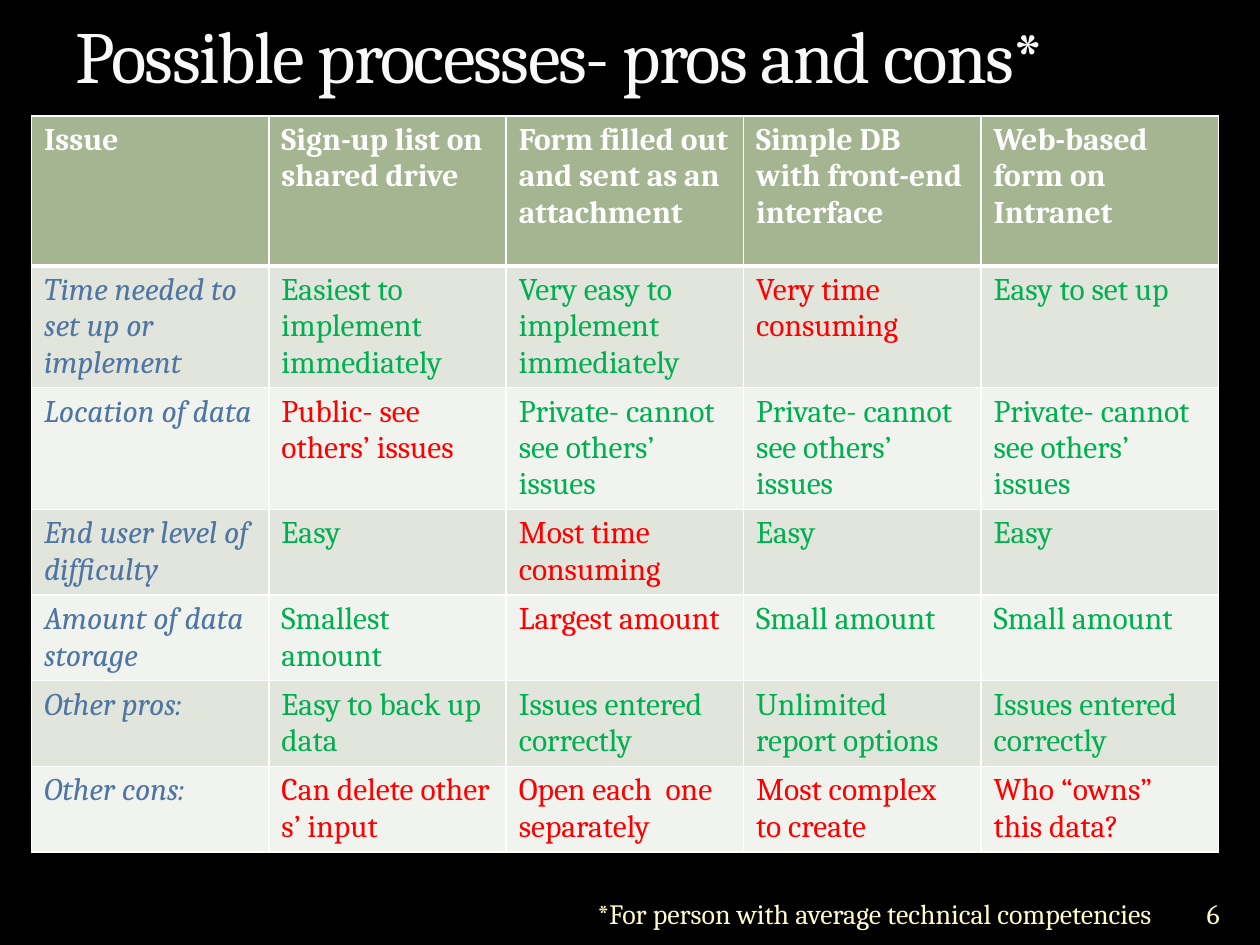
from typing import NamedTuple

from lxml.etree import SubElement
from pptx import Presentation
from pptx.dml.color import RGBColor
from pptx.enum.text import MSO_ANCHOR as Anchor
from pptx.oxml.ns import qn
from pptx.util import Inches, Pt

FONT = "Cambria"
BLACK = RGBColor(0x00, 0x00, 0x00)
WHITE = RGBColor(0xFF, 0xFF, 0xFF)
TITLE_WHITE = RGBColor(0xF9, 0xF9, 0xF9)
CREAM = RGBColor(0xFE, 0xFA, 0xC9)
SAGE = RGBColor(0xA5, 0xB5, 0x92)
BAND_DARK = RGBColor(0xE1, 0xE5, 0xDC)
BAND_LIGHT = RGBColor(0xF0, 0xF3, 0xEE)
ISSUE_BLUE = RGBColor(0x4E, 0x75, 0xA3)
PRO_GREEN = RGBColor(0x00, 0xB0, 0x50)
CON_RED = RGBColor(0xFF, 0x00, 0x00)


class Comparison(NamedTuple):
    issue: str
    verdicts: tuple[str, ...]
    cons: tuple[int, ...]
    height: float


HEADINGS = (
    "Issue",
    "Sign-up list on shared drive",
    "Form filled out and sent as an attachment",
    "Simple DB with front-end interface",
    "Web-based form on Intranet",
)
PRIVATE = "Private- cannot see others’ issues"
COMPARISONS = (
    Comparison("Time needed to set up or implement",
               ("Easiest to implement immediately", "Very easy to implement immediately",
                "Very time consuming", "Easy to set up"), (2,), 0.96),
    Comparison("Location of data",
               ("Public- see others’ issues", PRIVATE, PRIVATE, PRIVATE), (0,), 0.96),
    Comparison("End user level of difficulty",
               ("Easy", "Most time consuming", "Easy", "Easy"), (1,), 0.68),
    Comparison("Amount of data storage",
               ("Smallest amount", "Largest amount", "Small amount", "Small amount"), (1,), 0.68),
    Comparison("Other pros:",
               ("Easy to back up data", "Issues entered correctly",
                "Unlimited report options", "Issues entered correctly"), (), 0.68),
    Comparison("Other cons:",
               ("Can delete other s’ input", "Open each  one separately",
                "Most complex to create", "Who “owns” this data?"), (0, 1, 2, 3), 0.68),
)
HEADER_HEIGHT = 1.19


def style_text(frame, size: float, color: RGBColor, bold=False, italic=False) -> None:
    for run in frame.paragraphs[0].runs:
        run.font.name = FONT
        run.font.size = Pt(size)
        run.font.color.rgb = color
        run.font.bold = bold
        run.font.italic = italic


def add_borders(cell, bottom: float, top: float) -> None:
    properties = cell._tc.get_or_add_tcPr()
    widths = {"a:lnL": 1, "a:lnR": 1, "a:lnT": top, "a:lnB": bottom}
    for position, (side, width) in enumerate(widths.items()):
        line = SubElement(properties, qn(side), w=str(Pt(width)))
        SubElement(SubElement(line, qn("a:solidFill")), qn("a:srgbClr"), val=str(WHITE))
        properties.insert(position, line)


def fill_cell(cell, text: str, fill: RGBColor, color: RGBColor, bold=False,
              italic=False, bottom: float = 1, top: float = 1) -> None:
    cell.text_frame.text = text
    style_text(cell.text_frame, 18, color, bold, italic)
    cell.fill.solid()
    cell.fill.fore_color.rgb = fill
    add_borders(cell, bottom, top)


def add_comparison_table(slide) -> None:
    heights = [HEADER_HEIGHT] + [row.height for row in COMPARISONS]
    table = slide.shapes.add_table(
        len(heights), len(HEADINGS), Inches(0.25), Inches(0.92),
        Inches(9.42), Inches(sum(heights))).table
    for row, height in zip(table.rows, heights):
        row.height = Inches(height)
    for column, heading in enumerate(HEADINGS):
        fill_cell(table.cell(0, column), heading, SAGE, WHITE, bold=True, bottom=3)
    for number, comparison in enumerate(COMPARISONS, start=1):
        band = BAND_DARK if number % 2 else BAND_LIGHT
        top = 3 if number == 1 else 1
        fill_cell(table.cell(number, 0), comparison.issue, band, ISSUE_BLUE,
                  italic=True, top=top)
        for option, verdict in enumerate(comparison.verdicts):
            color = CON_RED if option in comparison.cons else PRO_GREEN
            fill_cell(table.cell(number, option + 1), verdict, band, color, top=top)


def add_text(slide, text: str, left: float, top: float, width: float, height: float,
             size: float, color: RGBColor, anchor: Anchor):
    frame = slide.shapes.add_textbox(
        Inches(left), Inches(top), Inches(width), Inches(height)).text_frame
    frame.word_wrap = True
    frame.vertical_anchor = anchor
    frame.text = text
    style_text(frame, size, color)
    return frame


def add_title(slide) -> None:
    title = add_text(slide, "Possible processes- pros and cons*", 0.5, 0, 9, 0.83,
                     42, TITLE_WHITE, Anchor.BOTTOM)
    title.paragraphs[0].runs[0]._r.get_or_add_rPr().set("spc", "-100")


def add_footnote(slide) -> None:
    footnote = add_text(slide, "*For person with average technical competencies\t6",
                        4.42, 7, 5.58, 0.5, 16, CREAM, Anchor.MIDDLE)
    footnote.margin_left = Inches(0.32)
    footnote.margin_right = footnote.margin_top = footnote.margin_bottom = 0
    tabs = SubElement(footnote.paragraphs[0]._p.get_or_add_pPr(), qn("a:tabLst"))
    SubElement(tabs, qn("a:tab"), pos=str(Inches(4.94)), algn="r")


def main() -> None:
    presentation = Presentation()
    presentation.slide_width = Inches(10)
    presentation.slide_height = Inches(7.5)
    slide = presentation.slides.add_slide(presentation.slide_layouts[6])
    slide.background.fill.solid()
    slide.background.fill.fore_color.rgb = BLACK
    add_comparison_table(slide)
    add_title(slide)
    add_footnote(slide)
    presentation.save("out.pptx")


if __name__ == "__main__":
    main()
